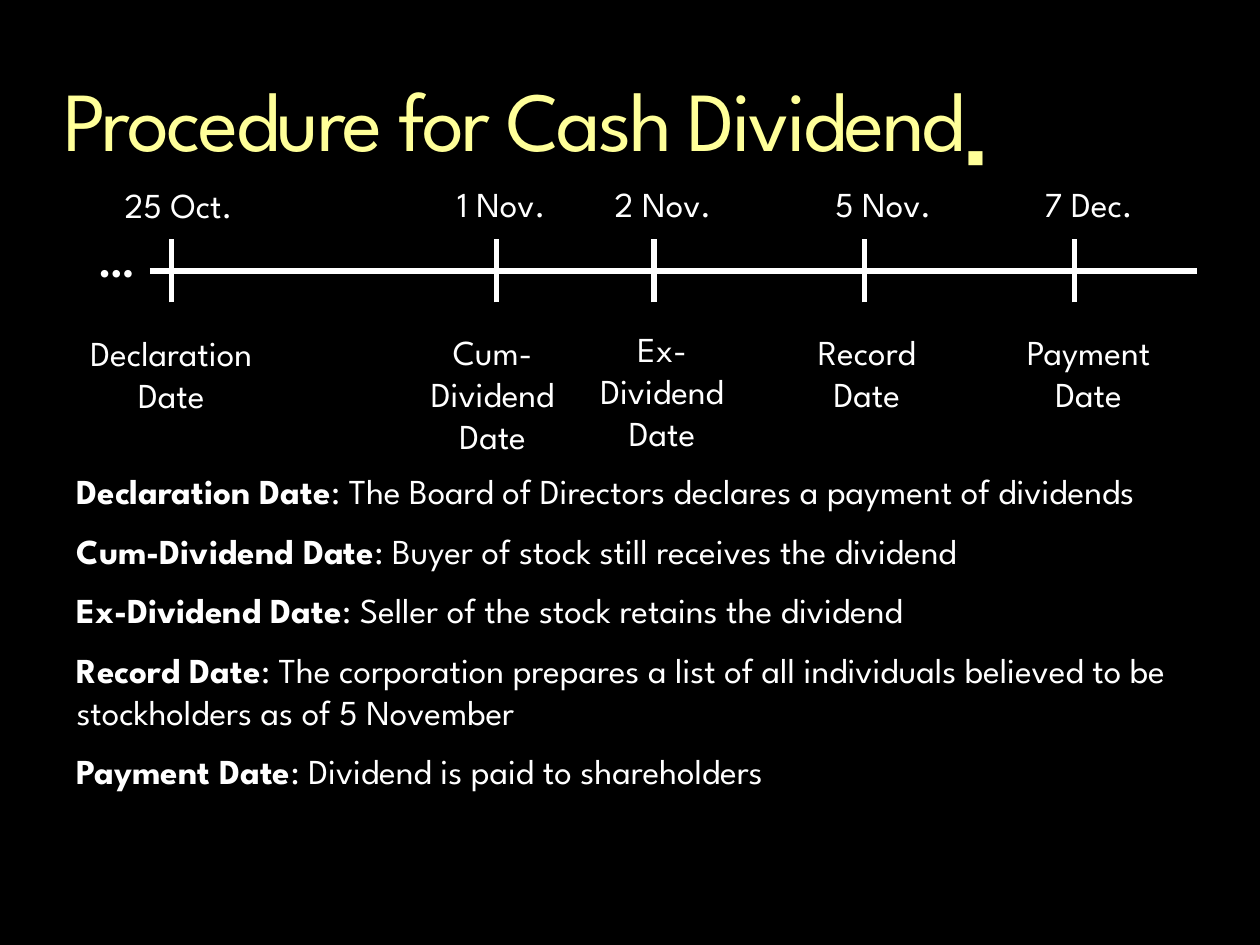
import pptx
import pptx.dml.color
import pptx.enum.shapes
import pptx.enum.text
import pptx.oxml
import pptx.oxml.ns
import pptx.util
from dataclasses import dataclass

Inches = pptx.util.Inches
Pt = pptx.util.Pt
Align = pptx.enum.text.PP_ALIGN


@dataclass(frozen=True)
class Theme:
    background: str = "000000"
    heading: str = "FFFF99"
    ink: str = "FFFFFF"
    font: str = "League Spartan"
    title_size: float = 48
    body_size: float = 20
    ellipsis_size: float = 24
    line_width: float = 3


def apply(target, values):
    for name, value in values.items():
        setattr(target, name, value)


class DividendSlide:
    def __init__(self, deck, theme):
        self.theme = theme
        self.slide = deck.slides.add_slide(deck.slide_layouts[5])
        fill = self.slide.background.fill
        fill.solid()
        fill.fore_color.rgb = pptx.dml.color.RGBColor.from_string(theme.background)

    def run(self, paragraph, words, size, color, bold=False, **extras):
        run = paragraph.add_run()
        run.text = words
        apply(run.font, {"name": self.theme.font, "size": Pt(size), "bold": bold})
        run.font.color.rgb = pptx.dml.color.RGBColor.from_string(color)
        for name, value in extras.items():
            run.font._element.set(name, value)

    def title(self, words, mark, left, top, width, height):
        heading = self.slide.shapes.title
        apply(heading, {"left": Inches(left), "top": Inches(top),
                        "width": Inches(width), "height": Inches(height)})
        apply(heading.text_frame, {
            "margin_left": 0, "margin_top": 0, "margin_right": 0, "margin_bottom": 0,
            "word_wrap": True,
            "vertical_anchor": pptx.enum.text.MSO_ANCHOR.TOP,
            "auto_size": pptx.enum.text.MSO_AUTO_SIZE.SHAPE_TO_FIT_TEXT})
        paragraph = heading.text_frame.paragraphs[0]
        apply(paragraph, {"alignment": Align.JUSTIFY, "line_spacing": 0.85,
                          "space_before": Pt(0), "space_after": Pt(6)})
        style = (self.theme.title_size, self.theme.heading)
        self.run(paragraph, words, *style, spc="-150")
        self.run(paragraph, mark, *style, spc="-150", baseline="-25000")

    def text(self, paragraphs, left, top, width, height, size=None, align=Align.LEFT):
        """Each paragraph is a list of (words, bold) pairs."""
        box = self.slide.shapes.add_textbox(
            Inches(left), Inches(top), Inches(width), Inches(height))
        frame = box.text_frame
        apply(frame, {"word_wrap": True,
                      "auto_size": pptx.enum.text.MSO_AUTO_SIZE.SHAPE_TO_FIT_TEXT})
        for index, pieces in enumerate(paragraphs):
            paragraph = frame.add_paragraph() if index else frame.paragraphs[0]
            apply(paragraph, {"alignment": align,
                              "space_before": Pt(10 if index else 0)})
            for words, bold in pieces:
                self.run(paragraph, words, size or self.theme.body_size,
                         self.theme.ink, bold)

    def line(self, x1, y1, x2, y2):
        rule = self.slide.shapes.add_connector(
            pptx.enum.shapes.MSO_CONNECTOR.STRAIGHT,
            Inches(x1), Inches(y1), Inches(x2), Inches(y2))
        rule.line.width = Pt(self.theme.line_width)
        rule.line.color.rgb = pptx.dml.color.RGBColor.from_string(self.theme.ink)
        rule._element.spPr.append(
            pptx.oxml.parse_xml(f"<a:effectLst {pptx.oxml.ns.nsdecls('a')}/>"))


AXIS_Y = 2.15
TICK_HALF = 0.25

# date, date left, date top, tick x, event, event left, event top, width, height
MILESTONES = [
    ("25 Oct.", 0.89, 1.41, 1.36, "Declaration Date", 0.46, 2.58, 1.8, 0.77),
    ("1 Nov.", 3.53, 1.4, 3.94, "Cum-Dividend Date", 3.17, 2.57, 1.48, 1.1),
    ("2 Nov.", 4.78, 1.4, 5.19, "Ex-Dividend Date", 4.53, 2.55, 1.45, 1.1),
    ("5 Nov.", 6.53, 1.4, 6.86, "Record Date", 6.28, 2.57, 1.2, 0.77),
    ("7 Dec.", 8.19, 1.4, 8.53, "Payment Date", 7.94, 2.57, 1.4, 0.77),
]

# Explanations, in the order of the milestones
MEANINGS = [
    "The Board of Directors declares a payment of dividends",
    "Buyer of stock still receives the dividend",
    "Seller of the stock retains the dividend",
    "The corporation prepares a list of all individuals believed to be "
    "stockholders as of 5 November",
    "Dividend is paid to shareholders",
]


def main():
    deck = pptx.Presentation()
    apply(deck, {"slide_width": Inches(10), "slide_height": Inches(7.5)})
    theme = Theme()
    page = DividendSlide(deck, theme)
    page.title("Procedure for Cash Dividend", "▪", 0.5, 0.58, 9.25, 0.69)

    # Timeline
    page.line(1.19, AXIS_Y, 9.5, AXIS_Y)
    page.text([[("…", True)]], 0.69, 1.82, 0.51, 0.5, theme.ellipsis_size)
    for date, date_x, date_y, tick_x, event, *event_box in MILESTONES:
        page.text([[(date, False)]], date_x, date_y, 1.2, 0.43)
        page.line(tick_x, AXIS_Y + TICK_HALF, tick_x, AXIS_Y - TICK_HALF)
        page.text([[(event, False)]], *event_box, align=Align.CENTER)

    # Definitions
    definitions = [[(milestone[4], True), (f": {meaning}", False)]
                   for milestone, meaning in zip(MILESTONES, MEANINGS)]
    page.text(definitions, 0.51, 3.68, 9.24, 3.13)

    deck.save("out.pptx")


if __name__ == "__main__":
    main()
